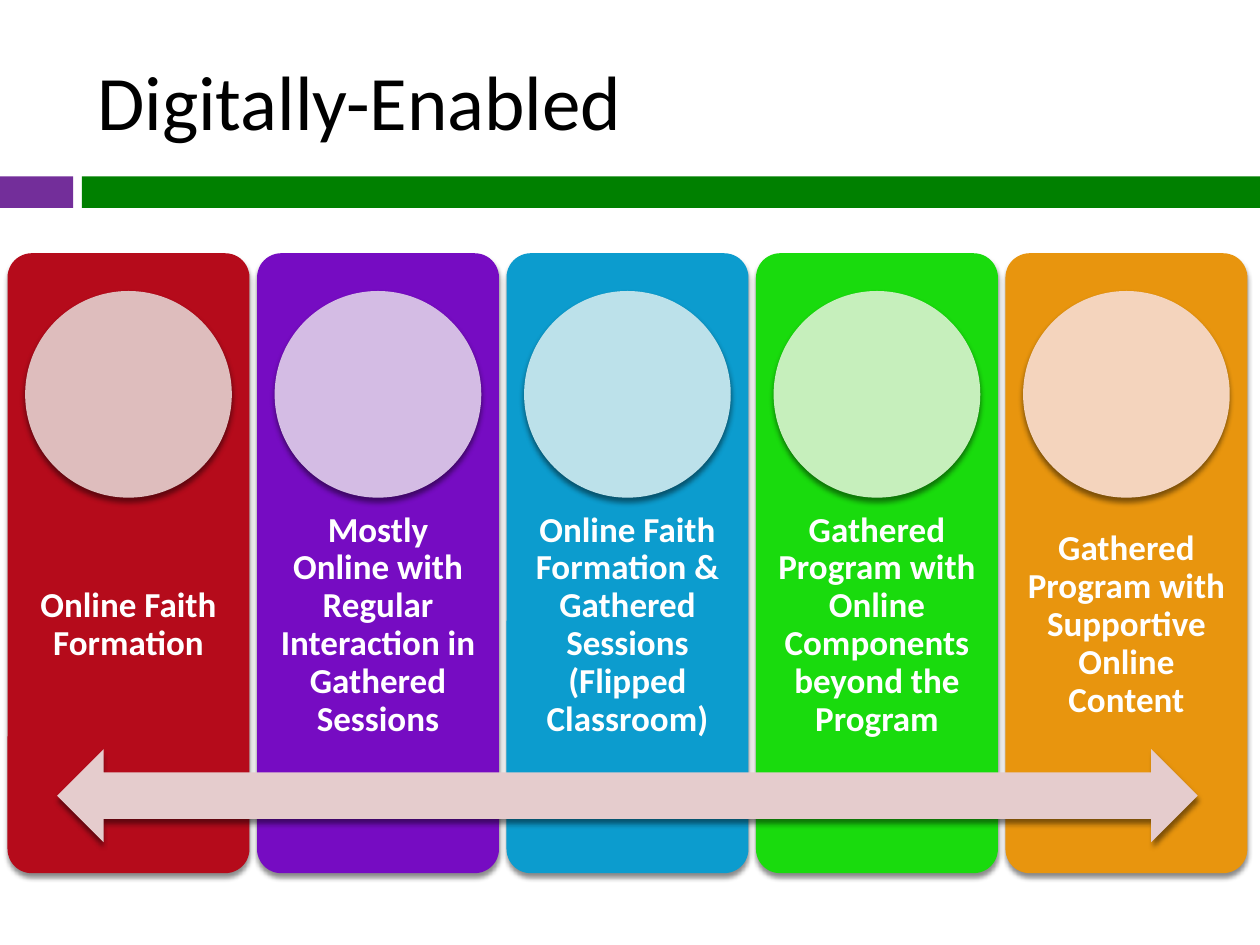
from lxml import etree
from pptx import Presentation
from pptx.dml.color import RGBColor
from pptx.enum.shapes import MSO_SHAPE
from pptx.enum.text import MSO_ANCHOR, PP_ALIGN
from pptx.oxml import parse_xml
from pptx.util import Inches, Pt

RECT = MSO_SHAPE.RECTANGLE
ROUND = MSO_SHAPE.ROUNDED_RECTANGLE
OVAL = MSO_SHAPE.OVAL
ARROW = MSO_SHAPE.LEFT_RIGHT_ARROW
MIDDLE = MSO_ANCHOR.MIDDLE
LEFT, CENTER = PP_ALIGN.LEFT, PP_ALIGN.CENTER

NS = "http://schemas.openxmlformats.org/drawingml/2006/main"
SHADOW = (
    f'<a:outerShdw xmlns:a="{NS}" blurRad="{Pt(3)}" dist="{Pt(2.4)}" dir="5400000" '
    'algn="ctr" rotWithShape="0"><a:srgbClr val="000000"><a:alpha val="45000"/>'
    "</a:srgbClr></a:outerShdw>"
)
CARDS = [
    ("Online Faith Formation", "B50B1B", "DEBDBD"),
    ("Mostly Online with Regular Interaction in Gathered Sessions", "760CC2", "D4BCE4"),
    ("Online Faith Formation & Gathered Sessions (Flipped Classroom)", "0C9CCE", "BCE1EA"),
    ("Gathered Program with Online Components beyond the Program", "19DB0D", "C6EFBC"),
    ("Gathered Program with Supportive Online Content", "E8950E", "F4D4BD"),
]


def color(code):
    """Turn a hex string into a colour."""
    return RGBColor.from_string(code)


def write(frame, text, size=20, ink="FFFFFF", bold=False, align=CENTER, pad=0.1, space=1.0):
    """Fill a text frame with one formatted paragraph."""
    frame.word_wrap = True
    frame.vertical_anchor = MIDDLE
    frame.margin_left = frame.margin_right = Inches(pad)
    frame.margin_top = frame.margin_bottom = Inches(pad)
    para = frame.paragraphs[0]
    para.alignment = align
    para.line_spacing = space
    run = para.add_run()
    run.text = text
    run.font.name = "Calibri"
    run.font.size = Pt(size)
    run.font.bold = bold
    run.font.color.rgb = color(ink)


def draw(slide, kind, box, fill, shade=True):
    """Add a filled shape without outline, with a soft shadow if wanted."""
    shape = slide.shapes.add_shape(kind, *map(Inches, box))
    shape.fill.solid()
    shape.fill.fore_color.rgb = color(fill)
    shape.line.fill.background()
    shape.shadow.inherit = False
    if shade:
        effects = shape.element.spPr.find(etree.QName(NS, "effectLst").text)
        effects.append(parse_xml(SHADOW))
    return shape


def header(slide, box):
    """Place the title and the two-part band below it."""
    left, top, width, height = box
    band, split, gap = 0.25, 0.58, 0.07
    line = top + height - band
    start = left + split + gap
    draw(slide, RECT, (left, line, split, band), "732E9A", shade=False)
    draw(slide, RECT, (start, line, left + width - start, band), "008000", shade=False)
    title = slide.shapes.title
    title.left, title.top = Inches(left + 0.67), Inches(top + 0.25)
    title.width, title.height = Inches(8.92), Inches(1.08)
    write(title.text_frame, "Digitally-Enabled", size=44, ink="000000", align=LEFT)


def card(slide, box, text, fill, tint):
    """Place one rounded column with its disc and label."""
    left, top, width, height = box
    panel = draw(slide, ROUND, box, fill)
    panel.adjustments[0] = 0.1
    label = (left, top + 0.4 * height, width, 0.4 * height)
    frame = slide.shapes.add_textbox(*map(Inches, label)).text_frame
    write(frame, text, bold=True, pad=0.16, space=0.9)
    disc = 1.64
    draw(slide, OVAL, (left + (width - disc) / 2, top + 0.3, disc, disc), tint)


def columns(slide, box):
    """Place the row of cards and the arrow that spans them."""
    left, top, width, height = box
    gap = 0.06
    wide = (width - gap * (len(CARDS) - 1)) / len(CARDS)
    for i, (text, fill, tint) in enumerate(CARDS):
        card(slide, (left + i * (wide + gap), top, wide, height), text, fill, tint)
    inset = 0.04 * width
    span = (left + inset, top + 0.8 * height, width - 2 * inset, 0.15 * height)
    draw(slide, ARROW, span, "E5CCCD")


def main():
    """Build the slide and save it."""
    deck = Presentation()
    deck.slide_width, deck.slide_height = Inches(10), Inches(7.5)
    slide = deck.slides.add_slide(deck.slide_layouts[5])
    header(slide, (0, 0, 10, 1.65))
    columns(slide, (0.06, 2.01, 9.84, 4.92))
    deck.save("out.pptx")


if __name__ == "__main__":
    main()
